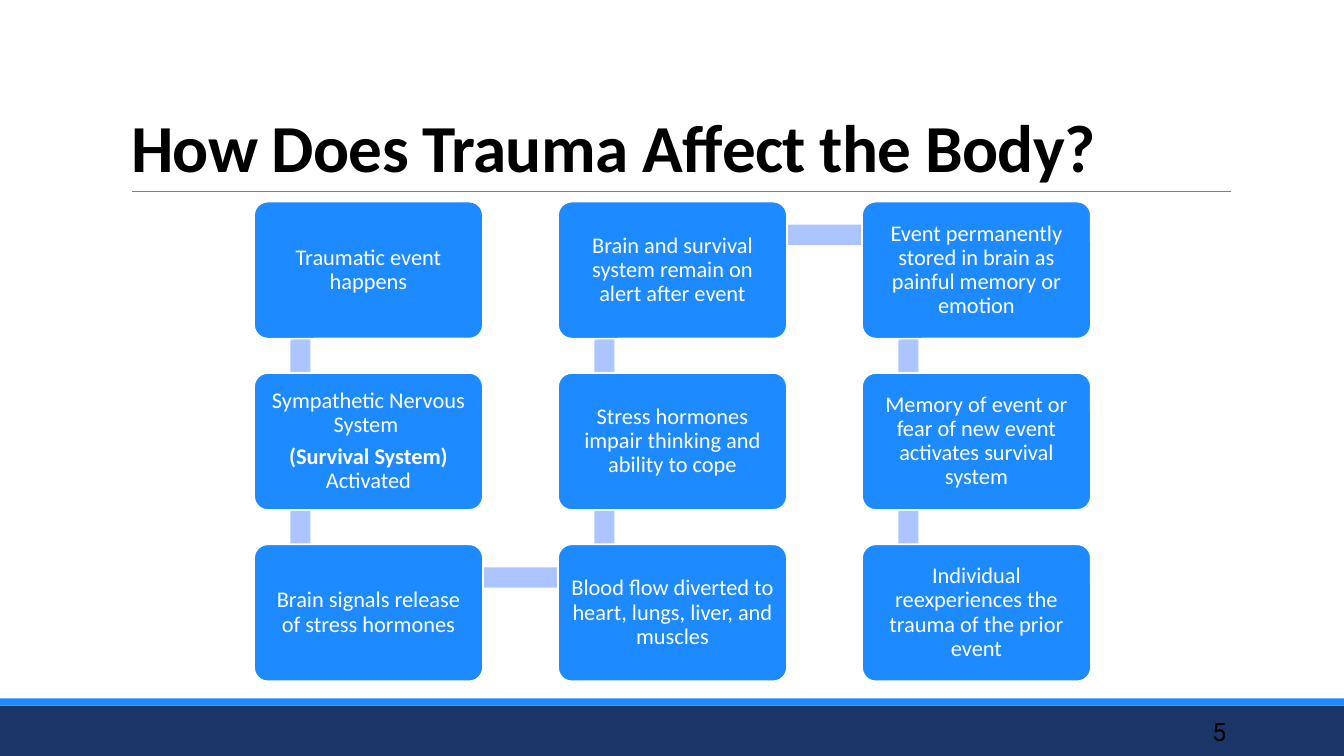
"""Build a slide that follows the effects of trauma on the body in nine linked steps."""
from itertools import pairwise

from pptx import Presentation
from pptx.dml.color import RGBColor
from pptx.enum.shapes import MSO_CONNECTOR as Connector, MSO_SHAPE as Shape
from pptx.enum.text import MSO_ANCHOR as Anchor, PP_ALIGN as Align
from pptx.oxml.ns import qn
from pptx.util import Inches, Pt
from lxml.etree import SubElement

BLACK = RGBColor(0x00, 0x00, 0x00)
WHITE = RGBColor(0xFF, 0xFF, 0xFF)
GRAY = RGBColor(0x80, 0x80, 0x80)
NAVY = RGBColor(0x1A, 0x36, 0x69)
BLUE = RGBColor(0x1D, 0x8A, 0xFF)
PALE_BLUE = RGBColor(0xAC, 0xC4, 0xFF)

GRID_LEFT, GRID_TOP = 2.52, 2
COLUMN_PITCH, ROW_PITCH = 3.015, 1.7
STEP_WIDTH, STEP_HEIGHT = 2.27, 1.36
ANCHOR_X, ANCHOR_Y = 0.46, 0.33
LINK_THICKNESS = 0.2

TITLE_FONT = {"name": "Calibri", "size": Pt(48), "bold": True}
STEP_FONT = {"name": "Calibri", "size": Pt(16)}
NUMBER_FONT = {"name": "Roboto", "size": Pt(18)}
STEP_PARAGRAPH = {"alignment": Align.CENTER, "line_spacing": 0.9, "space_after": Pt(5.6)}

STEPS = [
    [[("Traumatic event happens", False)]],
    [
        [("Sympathetic Nervous System ", False)],
        [("(Survival System) ", True), ("Activated", False)],
    ],
    [[("Brain signals release of stress hormones", False)]],
    [[("Blood flow diverted to heart, lungs, liver, and muscles", False)]],
    [[("Stress hormones impair thinking and ability to cope", False)]],
    [[("Brain and survival system remain on alert after event", False)]],
    [[("Event permanently stored in brain as painful memory or emotion", False)]],
    [[("Memory of event or fear of new event activates survival system", False)]],
    [[("Individual reexperiences the trauma of the prior event", False)]],
]


def apply_format(target, values):
    """Set each named attribute on the target."""
    for name, value in values.items():
        setattr(target, name, value)


def add_run(paragraph, text, font_values, color):
    """Append formatted text to a paragraph and return the run."""
    run = paragraph.add_run()
    run.text = text
    apply_format(run.font, font_values)
    run.font.color.rgb = color
    return run


def add_block(slide, kind, box, fill):
    """Draw a flat filled shape without an outline."""
    block = slide.shapes.add_shape(kind, *map(Inches, box))
    block.shadow.inherit = False
    block.fill.solid()
    block.fill.fore_color.rgb = fill
    block.line.fill.background()
    return block


def add_title(slide, text):
    """Place and format the title placeholder and the rule below it."""
    title = slide.shapes.title
    apply_format(title, {"left": Inches(1.2), "top": Inches(0.31),
                         "width": Inches(11), "height": Inches(1.59)})
    title.text_frame.vertical_anchor = Anchor.BOTTOM
    heading = title.text_frame.paragraphs[0]
    apply_format(heading, {"alignment": Align.LEFT, "line_spacing": 0.85})
    run = add_run(heading, text, TITLE_FONT, BLACK)
    run.font._element.set("spc", "-50")

    rule = slide.shapes.add_connector(
        Connector.STRAIGHT, Inches(1.31), Inches(1.9), Inches(12.21), Inches(1.9))
    rule.line.color.rgb = GRAY
    rule.line.width = Pt(0.5)
    SubElement(rule._element.spPr, qn("a:effectLst"))


def add_footer(slide, number):
    """Draw the bottom bands and the slide number."""
    add_block(slide, Shape.RECTANGLE, (0, 7, 13.33, 0.5), NAVY)
    add_block(slide, Shape.RECTANGLE, (0, 6.93, 13.33, 0.07), BLUE)
    number_box = slide.shapes.add_textbox(*map(Inches, (10.83, 7.06, 1.43, 0.4)))
    apply_format(number_box.text_frame, {"word_wrap": True, "vertical_anchor": Anchor.MIDDLE})
    paragraph = number_box.text_frame.paragraphs[0]
    paragraph.alignment = Align.RIGHT
    add_run(paragraph, number, NUMBER_FONT, BLACK)


def step_corner(index):
    """Return the left and top of a step on the snaking three-row grid."""
    column, row = divmod(index, 3)
    if column % 2:
        row = 2 - row
    return GRID_LEFT + column * COLUMN_PITCH, GRID_TOP + row * ROW_PITCH


def add_link(slide, start, end):
    """Draw the pale bar between the anchor points of two neighbouring steps."""
    left, top = (min(pair) for pair in zip(start, end))
    width, height = (abs(b - a) for a, b in zip(start, end))
    half = LINK_THICKNESS / 2
    if width > height:
        box = (left + ANCHOR_X, top + ANCHOR_Y - half, width, LINK_THICKNESS)
    else:
        box = (left + ANCHOR_X - half, top + ANCHOR_Y, LINK_THICKNESS, height)
    add_block(slide, Shape.RECTANGLE, box, PALE_BLUE)


def add_step(slide, corner, paragraphs):
    """Draw one rounded step with its text."""
    step = add_block(slide, Shape.ROUNDED_RECTANGLE, (*corner, STEP_WIDTH, STEP_HEIGHT), BLUE)
    step.adjustments[0] = 0.1
    step.line.color.rgb = WHITE
    step.line.width = Pt(1.25)
    frame = step.text_frame
    apply_format(frame, {"word_wrap": True, "vertical_anchor": Anchor.MIDDLE})
    for side in ("left", "top", "right", "bottom"):
        setattr(frame, f"margin_{side}", Inches(0.07))
    for position, runs in enumerate(paragraphs):
        paragraph = frame.add_paragraph() if position else frame.paragraphs[0]
        apply_format(paragraph, STEP_PARAGRAPH)
        for text, bold in runs:
            add_run(paragraph, text, {**STEP_FONT, "bold": bold}, WHITE)


def main():
    """Assemble and save the slide."""
    deck = Presentation()
    apply_format(deck, {"slide_width": Inches(13.33), "slide_height": Inches(7.5)})
    slide = deck.slides.add_slide(deck.slide_layouts[5])
    add_title(slide, "How Does Trauma Affect the Body?")
    add_footer(slide, "5")
    corners = [step_corner(index) for index in range(len(STEPS))]
    for start, end in pairwise(corners):
        add_link(slide, start, end)
    for corner, paragraphs in zip(corners, STEPS):
        add_step(slide, corner, paragraphs)
    deck.save("out.pptx")


if __name__ == "__main__":
    main()
